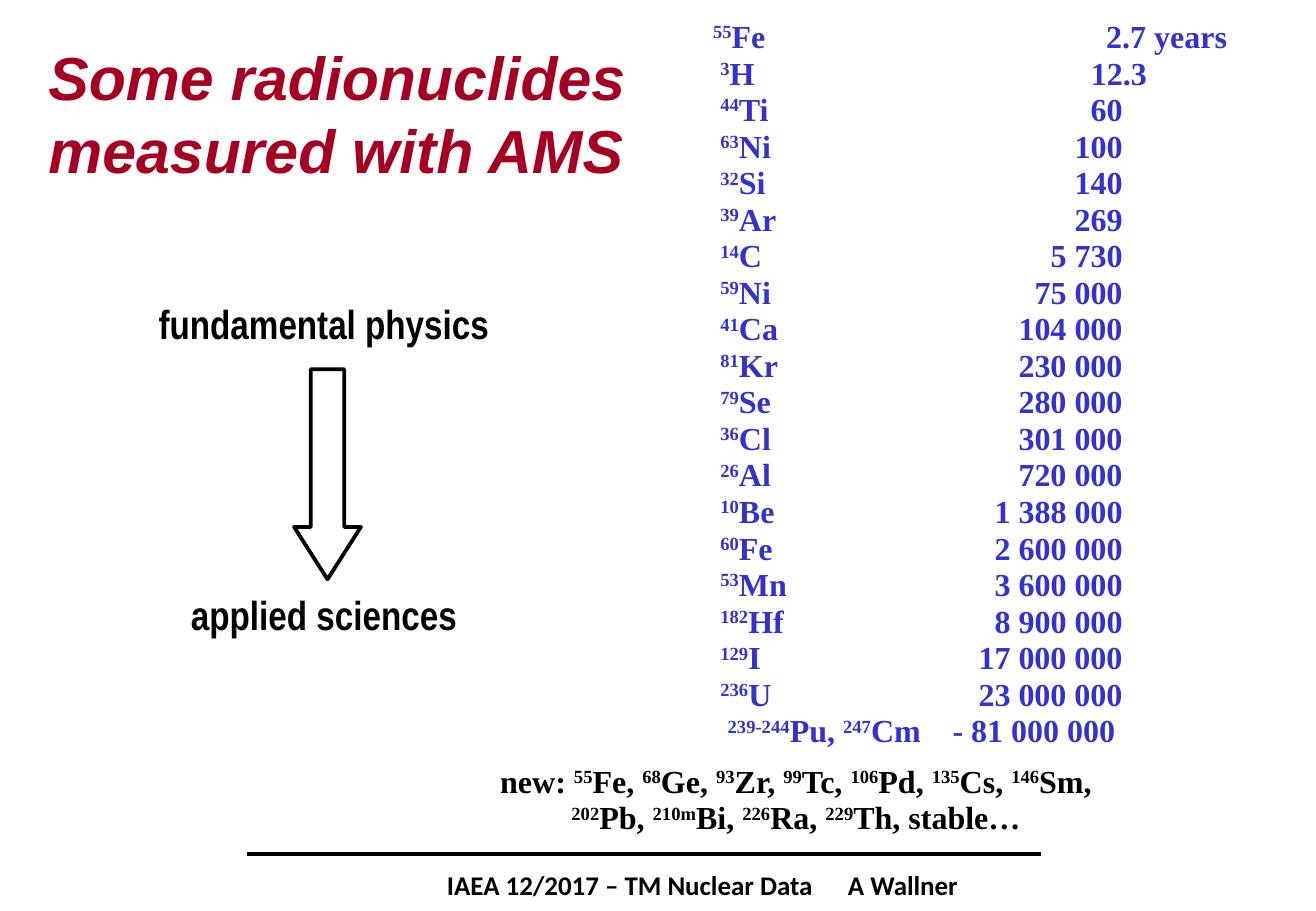
from pptx import Presentation
from pptx.util import Inches, Pt
from pptx.dml.color import RGBColor
from pptx.enum.shapes import MSO_SHAPE as Shape, MSO_CONNECTOR as Line
from pptx.enum.text import PP_ALIGN as Align
from pptx.oxml.ns import qn
from lxml import etree

# Content: text between carets is superscript
TITLE = "Some radionuclides measured with AMS"
FIELDS = ["fundamental physics", "applied sciences"]
HALVES = [
    ("^55^Fe", "2.7 years"), ("^3^H", "12.3"), ("^44^Ti", "60"),
    ("^63^Ni", "100"), ("^32^Si", "140"), ("^39^Ar", "269"),
    ("^14^C", "5 730"), ("^59^Ni", "75 000"), ("^41^Ca", "104 000"),
    ("^81^Kr", "230 000"), ("^79^Se", "280 000"), ("^36^Cl", "301 000"),
    ("^26^Al", "720 000"), ("^10^Be", "1 388 000"), ("^60^Fe", "2 600 000"),
    ("^53^Mn", "3 600 000"), ("^182^Hf", "8 900 000"),
    ("^129^I", "17 000 000"), ("^236^U", "23 000 000"),
    ("^239-244^Pu, ^247^Cm", "- 81 000 000"),
]
NEW = ("new: ^55^Fe, ^68^Ge, ^93^Zr, ^99^Tc, ^106^Pd, ^135^Cs, ^146^Sm, "
       "^202^Pb, ^210m^Bi, ^226^Ra, ^229^Th, stable…")
FOOTER = ["IAEA 12/2017 – TM Nuclear Data", "A Wallner"]

# Tab stops in inches from the text edge; some rows stand apart
STOPS = (1.43, 4.74)
APART = {0: (1.37, 5.6), 1: (1.43, 4.94), len(HALVES) - 1: (1.49, 4.68)}
BLACK, BLUE, RED, WHITE = "000000", "3333CC", "A50021", "FFFFFF"
SERIF = "Times New Roman"

deck = Presentation()
deck.slide_width, deck.slide_height = Inches(10.83), Inches(7.5)
slide = deck.slides.add_slide(deck.slide_layouts[6])


def color(code):
    return RGBColor.from_string(code)


def set_tabs(para, stops):
    tabs = etree.SubElement(para._p.get_or_add_pPr(), qn("a:tabLst"))
    for x, side in stops:
        etree.SubElement(tabs, qn("a:tab"), pos=str(Inches(x)), algn=side)


def write(box, lines, font=SERIF, size=19, ink=BLACK, italic=False,
          align=Align.CENTER, pitch=None, gap=0, tabs=None):
    """Fill a text box, one paragraph a line."""
    frame = slide.shapes.add_textbox(*map(Inches, box)).text_frame
    frame.word_wrap = True
    for i, line in enumerate(lines):
        para = frame.paragraphs[0] if i == 0 else frame.add_paragraph()
        para.alignment = align
        if pitch:
            para.line_spacing = pitch
        if i and gap:
            para.space_before = Pt(gap)
        if tabs:
            set_tabs(para, tabs[i])
        for n, part in enumerate(line.split("^")):
            if not part:
                continue
            run = para.add_run()
            run.text = part
            face = run.font
            face.name, face.size, face.bold = font, Pt(size), True
            face.italic = italic
            face.color.rgb = color(ink)
            if n % 2:
                run._r.get_or_add_rPr().set("baseline", "30000")


# Footer with its rule
rule = slide.shapes.add_connector(
    Line.STRAIGHT, *map(Inches, (2.03, 7.03, 8.57, 7.03)))
rule.line.color.rgb = color(BLACK)
rule.line.width = Pt(2.25)
etree.SubElement(rule._element.spPr, qn("a:effectLst"))
write((1.95, 7.1, 7.72, 0.37), ["\t" + "\t".join(FOOTER)], font="Calibri",
      size=16, align=Align.LEFT, tabs=[[(1.63, "l"), (4.93, "l")]])

# Title
write((0.3, 0.28, 5.01, 1.55), [TITLE], font="Arial", size=36, ink=RED,
      italic=True, align=Align.LEFT)

# From physics down to applications
write((1.09, 2.41, 3.15, 2.9), FIELDS, font="Arial Narrow", size=24, gap=144)
arrow = slide.shapes.add_shape(
    Shape.DOWN_ARROW, *map(Inches, (2.42, 3.04, 0.55, 1.73)))
arrow.adjustments[0], arrow.adjustments[1] = 0.5, 0.785
arrow.shadow.inherit = False
arrow.fill.solid()
arrow.fill.fore_color.rgb = color(WHITE)
arrow.line.color.rgb = color(BLACK)
arrow.line.width = Pt(2.25)

# Nuclides and half-lives
stops = [list(zip(APART.get(i, STOPS), "lr")) for i in range(len(HALVES))]
write((4.4, 0.11, 6.37, 6.48), [f"\t{name}\t{life}" for name, life in HALVES],
      ink=BLUE, align=Align.LEFT, pitch=0.95, tabs=stops)

# New nuclides
write((3.84, 6.24, 5.42, 0.71), [NEW], pitch=0.95)

deck.save("out.pptx")
